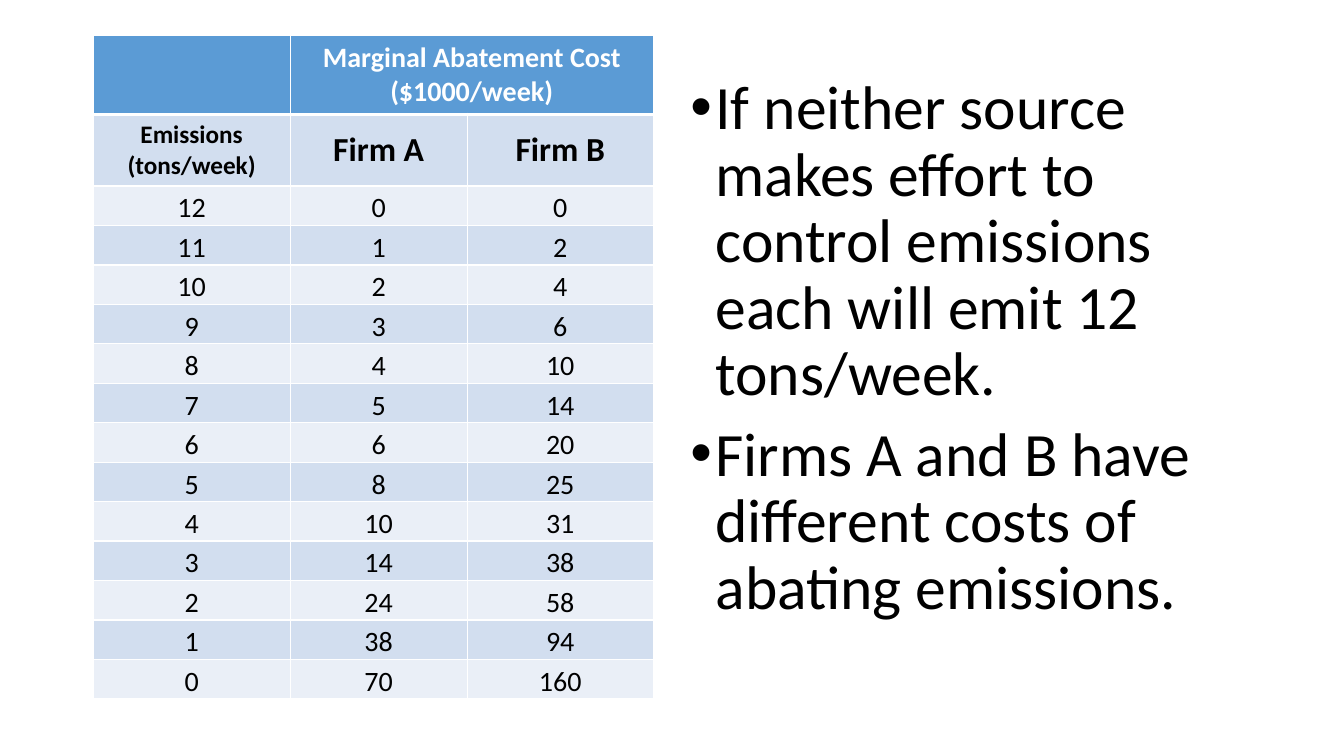
from lxml import etree
from pptx import Presentation
from pptx.dml.color import RGBColor
from pptx.enum.text import MSO_ANCHOR, PP_ALIGN
from pptx.oxml.ns import qn
from pptx.util import Pt

FONT = "Calibri"
WHITE = RGBColor(0xFF, 0xFF, 0xFF)
BLACK = RGBColor(0x00, 0x00, 0x00)
BLUE = RGBColor(0x5B, 0x9B, 0xD5)
BAND_DARK = RGBColor(0xD2, 0xDE, 0xEF)
BAND_LIGHT = RGBColor(0xEA, 0xEF, 0xF7)

EMISSIONS = range(12, -1, -1)
FIRM_A = [0, 1, 2, 3, 4, 5, 6, 8, 10, 14, 24, 38, 70]
FIRM_B = [0, 2, 4, 6, 10, 14, 20, 25, 31, 38, 58, 94, 160]
COLUMN_WIDTHS = [140.8, 126.4, 133]
ROW_HEIGHTS = [50.4, 46.1] + [28.15] * len(FIRM_A)

BULLETS = [
    "If neither source makes effort to control emissions each will emit 12 tons/week.",
    "Firms A and B have different costs of abating emissions.",
]


def format_run(r, size, color, bold=False):
    r.font.name = FONT
    r.font.size = Pt(size)
    r.font.bold = bold
    r.font.color.rgb = color


def set_borders(cell, top=1, bottom=1):
    tcPr = cell._tc.get_or_add_tcPr()
    for side, width in (("L", 1), ("R", 1), ("T", top), ("B", bottom)):
        ln = etree.SubElement(tcPr, qn(f"a:ln{side}"), w=str(Pt(width)))
        fill = etree.SubElement(ln, qn("a:solidFill"))
        etree.SubElement(fill, qn("a:srgbClr"), val=str(WHITE))


def style_cell(cell, fill, top=1, bottom=1):
    # Borders must come before the fill in the cell properties
    set_borders(cell, top, bottom)
    cell.fill.solid()
    cell.fill.fore_color.rgb = fill


def write_cell(cell, text, size, color=BLACK, bold=True, anchor=MSO_ANCHOR.TOP):
    cell.vertical_anchor = anchor
    p = cell.text_frame.paragraphs[0]
    p.text = text
    p.alignment = PP_ALIGN.CENTER
    format_run(p.runs[0], size, color, bold)
    return p


def write_value(cell, value):
    cell.margin_left = cell.margin_right = Pt(5)
    cell.margin_top = cell.margin_bottom = Pt(0)
    p = write_cell(cell, str(value), 20, bold=False, anchor=MSO_ANCHOR.BOTTOM)
    p.line_spacing = 1.15


def add_cost_table(s):
    frame = s.shapes.add_table(len(ROW_HEIGHTS), len(COLUMN_WIDTHS), Pt(66.5), Pt(25.5),
                               Pt(sum(COLUMN_WIDTHS)), Pt(sum(ROW_HEIGHTS)))
    table = frame.table
    for column, width in zip(table.columns, COLUMN_WIDTHS):
        column.width = Pt(width)
    for row, height in zip(table.rows, ROW_HEIGHTS):
        row.height = Pt(height)

    # Heading row
    for cell in table.rows[0].cells:
        style_cell(cell, BLUE, bottom=3)
    table.cell(0, 1).merge(table.cell(0, 2))
    write_cell(table.cell(0, 1), "Marginal Abatement Cost ($1000/week)", 20, WHITE)

    # Column names
    for cell in table.rows[1].cells:
        style_cell(cell, BAND_DARK, top=3)
    write_cell(table.cell(1, 0), "Emissions (tons/week)", 18)
    for col, firm in enumerate(("Firm A", "Firm B"), start=1):
        write_cell(table.cell(1, col), firm, 24, anchor=MSO_ANCHOR.MIDDLE)

    # Values in alternating bands
    for row, values in enumerate(zip(EMISSIONS, FIRM_A, FIRM_B), start=2):
        for col, value in enumerate(values):
            cell = table.cell(row, col)
            style_cell(cell, BAND_DARK if row % 2 else BAND_LIGHT)
            write_value(cell, value)


def add_bullet(p, text):
    p.text = text
    p.line_spacing = 0.9
    p.space_before = Pt(10)
    format_run(p.runs[0], 44, BLACK)
    pPr = p._p.get_or_add_pPr()
    pPr.set("marL", str(Pt(18)))
    pPr.set("indent", str(-Pt(18)))
    etree.SubElement(pPr, qn("a:buFont"), typeface="Arial")
    etree.SubElement(pPr, qn("a:buChar"), char="•")


def add_bullet_list(s):
    sp = s.shapes.add_textbox(Pt(486), Pt(51), Pt(408), Pt(466.5))
    tf = sp.text_frame
    tf.word_wrap = True
    for i, text in enumerate(BULLETS):
        add_bullet(tf.add_paragraph() if i else tf.paragraphs[0], text)


def main():
    prs = Presentation()
    prs.slide_width, prs.slide_height = Pt(960), Pt(540)
    s = prs.slides.add_slide(prs.slide_layouts[6])
    add_cost_table(s)
    add_bullet_list(s)
    prs.save("out.pptx")


if __name__ == "__main__":
    main()
